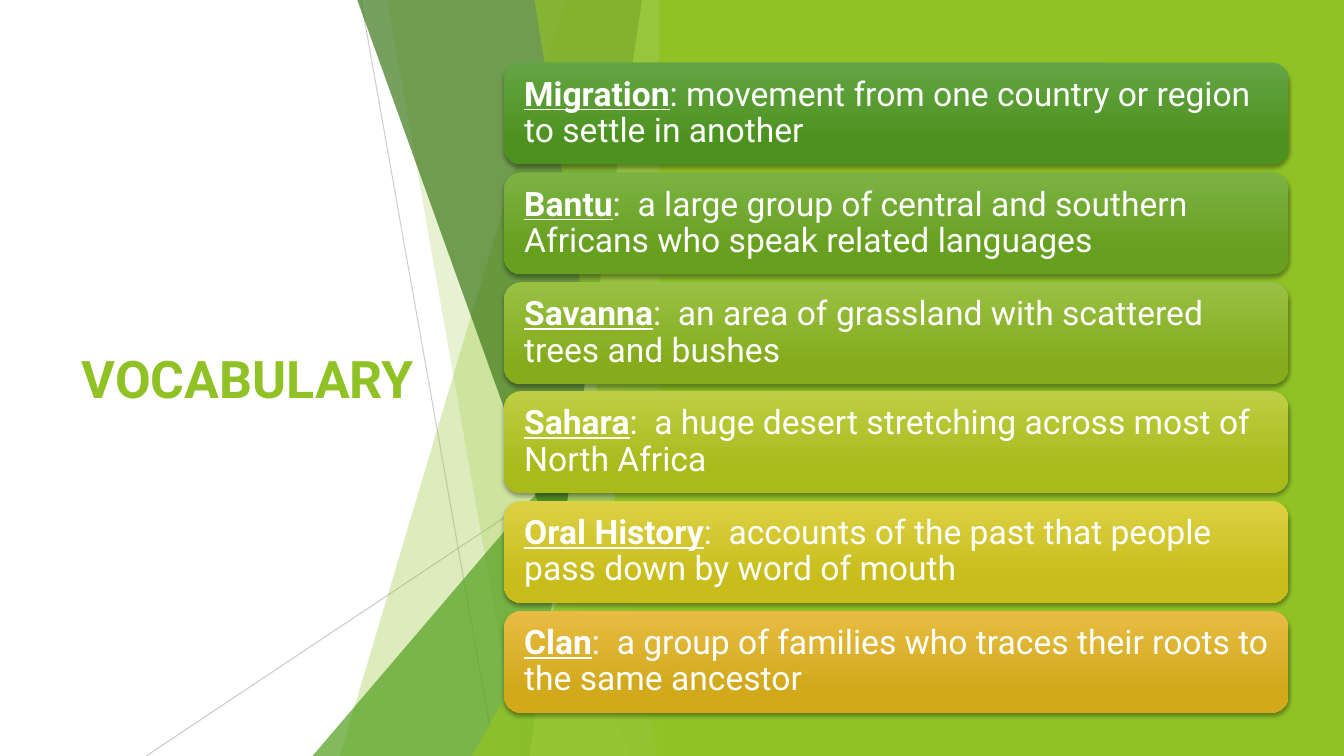
import pptx
import pptx.util
from pptx.dml.color import RGBColor
from pptx.enum.shapes import MSO_CONNECTOR, MSO_SHAPE
from pptx.enum.text import MSO_ANCHOR, PP_ALIGN
from pptx.oxml import parse_xml
from pptx.oxml.ns import nsdecls, qn

EMU_PER_PX = 9144
FONT = "Roboto"
LIME = "90C226"
WHITE = "FFFFFF"
TOP, BOTTOM = -1, 750

LINES = [
    ((358, 0), (491, 750), 75),
    ((666, 403), (145, 750), 80),
]
FACETS = [
    ("band", (561, 666, 666, 337), LIME, 30),
    ("band", (384, 667, 667, 516), LIME, 20),
    ("triangle", (310, 333, 356, 417), "54A021", 72),
    ("band", (354, 666, 666, 624), "3F7819", 70),
    ("band", (637, 666, 666, 525), "C0E474", 70),
    ("band", (530, 666, 666, 651), LIME, 65),
    ("triangle", (468, 393, 199, 357), LIME, 80),
]
CARD_LEFT, CARD_WIDTH, CARD_HEIGHT = 500, 778, 101
FIRST_CARD_TOP, LAST_CARD_TOP = 62, 606
CARDS = [
    ("Migration", ": movement from one country or region to settle in another", "63A545", "4D921E"),
    ("Bantu", ":  a large group of central and southern Africans who speak related languages", "7BB244", "679F1E"),
    ("Savanna", ":  an area of grassland with scattered trees and bushes", "99C044", "86AC1D"),
    ("Sahara", ":  a huge desert stretching across most of North Africa", "BDCE43", "A9BA1B"),
    ("Oral History", ":  accounts of the past that people pass down by word of mouth", "DCD143", "C8BD1A"),
    ("Clan", ":  a group of families who traces their roots to the same ancestor", "E7BC43", "D2A91B"),
]


def px(value):
    return pptx.util.Emu(value * EMU_PER_PX)


def rgb(color):
    return RGBColor.from_string(color)


def set_attributes(target, values):
    for name, value in values.items():
        setattr(target, name, value)


def set_font(font, size, color, **styles):
    set_attributes(font, {"name": FONT, "size": pptx.util.Pt(size), **styles})
    font.color.rgb = rgb(color)


def set_alpha(shape, percent):
    color = shape.element.spPr.find(".//" + qn("a:srgbClr"))
    color.append(parse_xml(f'<a:alpha {nsdecls("a")} val="{percent * 1000}"/>'))


def paint(shape, color):
    shape.shadow.inherit = False
    shape.fill.solid()
    shape.fill.fore_color.rgb = rgb(color)
    shape.line.fill.background()


def add_preset(slide, kind, left, top, width, height):
    return slide.shapes.add_shape(kind, px(left), px(top), px(width), px(height))


def add_line(slide, start, end, alpha):
    connector = slide.shapes.add_connector(
        MSO_CONNECTOR.STRAIGHT, *map(px, start), *map(px, end))
    connector.line.color.rgb = rgb("BFBFBF")
    connector.line.width = pptx.util.Pt(0.75)
    set_alpha(connector, alpha)
    connector.element.spPr.append(parse_xml(f'<a:effectLst {nsdecls("a")}/>'))


def add_band(slide, top_left, top_right, bottom_right, bottom_left):
    builder = slide.shapes.build_freeform(top_left, TOP, scale=EMU_PER_PX)
    builder.add_line_segments(
        [(top_right, TOP), (bottom_right, BOTTOM), (bottom_left, BOTTOM)], close=True)
    return builder.convert_to_shape()


def add_triangle(slide, left, top, width, height):
    triangle = add_preset(slide, MSO_SHAPE.ISOSCELES_TRIANGLE, left, top, width, height)
    triangle.adjustments[0] = 1
    return triangle


def add_facet(slide, kind, geometry, color, alpha):
    facet = {"band": add_band, "triangle": add_triangle}[kind](slide, *geometry)
    paint(facet, color)
    set_alpha(facet, alpha)


def add_shadow(shape):
    shape.shadow.inherit = False
    shape.element.spPr.find(qn("a:effectLst")).append(parse_xml(
        f'<a:outerShdw {nsdecls("a")} blurRad="38100" dist="25400" dir="5400000" rotWithShape="0">'
        '<a:srgbClr val="000000"><a:alpha val="35000"/></a:srgbClr></a:outerShdw>'))


def add_card(slide, top, term, definition, light, dark):
    card = add_preset(slide, MSO_SHAPE.ROUNDED_RECTANGLE, CARD_LEFT, top, CARD_WIDTH, CARD_HEIGHT)
    card.line.fill.background()
    card.fill.gradient()
    card.fill.gradient_angle = 270
    for stop, color, position in zip(card.fill.gradient_stops, (light, dark), (0, 0.78)):
        stop.color.rgb = rgb(color)
        stop.position = position
    add_shadow(card)
    set_attributes(card.text_frame, {
        "word_wrap": True, "vertical_anchor": MSO_ANCHOR.MIDDLE,
        "margin_left": px(15), "margin_right": px(15),
        "margin_top": px(10), "margin_bottom": px(10)})
    paragraph = card.text_frame.paragraphs[0]
    set_attributes(paragraph, {"alignment": PP_ALIGN.LEFT, "line_spacing": 0.9})
    for text, marked in ((term, True), (definition, False)):
        run = paragraph.add_run()
        run.text = text
        set_font(run.font, 24, WHITE, bold=marked, underline=marked)


def set_title(slide, text):
    title = slide.shapes.title
    set_attributes(title, {"left": px(71), "top": px(151), "width": px(388), "height": px(448)})
    title.text_frame.text = text
    set_attributes(title.text_frame, {"word_wrap": True, "vertical_anchor": MSO_ANCHOR.MIDDLE})
    paragraph = title.text_frame.paragraphs[0]
    paragraph.alignment = PP_ALIGN.LEFT
    set_font(paragraph.runs[0].font, 37, LIME, bold=True)


def main():
    presentation = pptx.Presentation()
    set_attributes(presentation, {"slide_width": px(1333), "slide_height": px(750)})
    slide = presentation.slides.add_slide(presentation.slide_layouts[5])
    set_title(slide, "VOCABULARY ")
    for line in LINES:
        add_line(slide, *line)
    for facet in FACETS:
        add_facet(slide, *facet)
    paint(add_preset(slide, MSO_SHAPE.RECTANGLE, 654, 0, 679, 750), LIME)
    pitch = (LAST_CARD_TOP - FIRST_CARD_TOP) / (len(CARDS) - 1)
    for index, card in enumerate(CARDS):
        add_card(slide, FIRST_CARD_TOP + round(index * pitch), *card)
    presentation.save("out.pptx")


if __name__ == "__main__":
    main()
